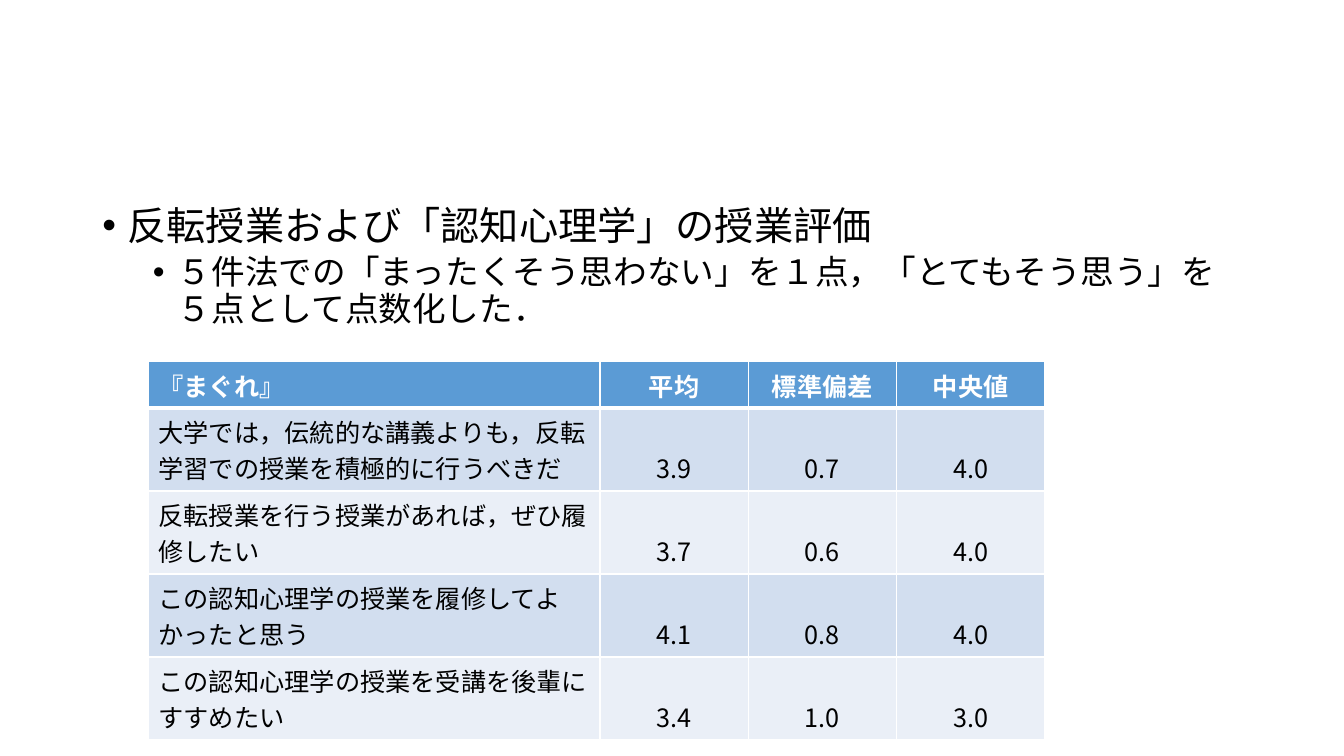
from dataclasses import dataclass

from lxml.etree import SubElement as add_element
from pptx import Presentation
from pptx.dml.color import RGBColor
from pptx.enum.text import MSO_ANCHOR as Anchor, PP_ALIGN as Align
from pptx.oxml.ns import qn
from pptx.util import Inches, Pt


@dataclass(frozen=True)
class Theme:
    font: str = "Noto Sans CJK JP"
    ink: str = "000000"
    paper: str = "FFFFFF"
    header: str = "5B9BD5"
    bands: tuple = ("D2DEEF", "EAEFF7")
    bullet_sizes: tuple = (28, 24)
    table_size: int = 18
    rule: int = 1
    heavy_rule: int = 3


BULLETS = [
    "反転授業および「認知心理学」の授業評価",
    "５件法での「まったくそう思わない」を１点，「とてもそう思う」を５点として点数化した．",
]
RATINGS = [
    ("『まぐれ』", "平均", "標準偏差", "中央値"),
    ("大学では，伝統的な講義よりも，反転学習での授業を積極的に行うべきだ", "3.9", "0.7", "4.0"),
    ("反転授業を行う授業があれば，ぜひ履修したい", "3.7", "0.6", "4.0"),
    ("この認知心理学の授業を履修してよかったと思う", "4.1", "0.8", "4.0"),
    ("この認知心理学の授業を受講を後輩にすすめたい", "3.4", "1.0", "3.0"),
]


class SlideBuilder:
    def __init__(self, deck, theme):
        self.deck = deck
        self.theme = theme
        self.page = deck.slides.add_slide(deck.slide_layouts[6])

    def across(self, percent):
        return round(self.deck.slide_width * percent / 100)

    def down(self, percent):
        return round(self.deck.slide_height * percent / 100)

    def frame(self, left, top, width, height):
        return self.across(left), self.down(top), self.across(width), self.down(height)

    def style(self, para, size, color, bold=False):
        for span in para.runs:
            font = span.font
            font.name, font.size, font.bold = self.theme.font, Pt(size), bold
            font.color.rgb = RGBColor.from_string(color)
            add_element(font._element, qn("a:ea"), typeface=self.theme.font)

    def bullets(self, lines, *area):
        box = self.page.shapes.add_textbox(*self.frame(*area))
        box.text_frame.word_wrap = True
        box.text_frame.text = "\n".join(lines)
        for level, para in enumerate(box.text_frame.paragraphs):
            para.level = level
            para.line_spacing = 0.9
            para.space_before = Pt(10 - 5 * level)
            properties = para._p.get_or_add_pPr()
            properties.set("marL", str(Inches(0.25 + 0.5 * level)))
            properties.set("indent", str(Inches(-0.25)))
            add_element(properties, qn("a:buFont"), typeface="Arial")
            add_element(properties, qn("a:buChar"), char="•")
            self.style(para, self.theme.bullet_sizes[level], self.theme.ink)

    def borders(self, cell, row):
        heavy_sides = {0: "lnB", 1: "lnT"}
        properties = cell._tc.get_or_add_tcPr()
        for side in ("lnL", "lnR", "lnT", "lnB"):
            heavy = heavy_sides.get(row) == side
            width = self.theme.heavy_rule if heavy else self.theme.rule
            line = add_element(properties, qn(f"a:{side}"), w=str(Pt(width)))
            fill = add_element(line, qn("a:solidFill"))
            add_element(fill, qn("a:srgbClr"), val=self.theme.paper)

    def table(self, records, left, top, widths, heights):
        area = self.frame(left, top, sum(widths), sum(heights))
        table = self.page.shapes.add_table(len(records), len(widths), *area).table
        for column, width in zip(table.columns, widths):
            column.width = self.across(width)
        for row, height in zip(table.rows, heights):
            row.height = self.down(height)
        for row, record in enumerate(records):
            for column, text in enumerate(record):
                self.cell(table.cell(row, column), text, row, column)

    def cell(self, cell, text, row, column):
        header = row == 0
        self.borders(cell, row)
        cell.fill.solid()
        shade = self.theme.header if header else self.theme.bands[(row - 1) % 2]
        cell.fill.fore_color.rgb = RGBColor.from_string(shade)
        cell.text_frame.text = text
        para = cell.text_frame.paragraphs[0]
        para.alignment = Align.CENTER if column else Align.LEFT
        cell.vertical_anchor = Anchor.BOTTOM if row and column else Anchor.TOP
        color = self.theme.paper if header else self.theme.ink
        self.style(para, self.theme.table_size, color, header)


def main():
    deck = Presentation()
    deck.slide_width, deck.slide_height = Inches(13.33), Inches(7.5)
    builder = SlideBuilder(deck, Theme())
    builder.bullets(BULLETS, 6.88, 26.67, 86.25, 63.47)
    builder.table(RATINGS, 11.05, 47.87, [33.6] + [11.03] * 3, [6.1] + [10.98] * 4)
    deck.save("out.pptx")


if __name__ == "__main__":
    main()
